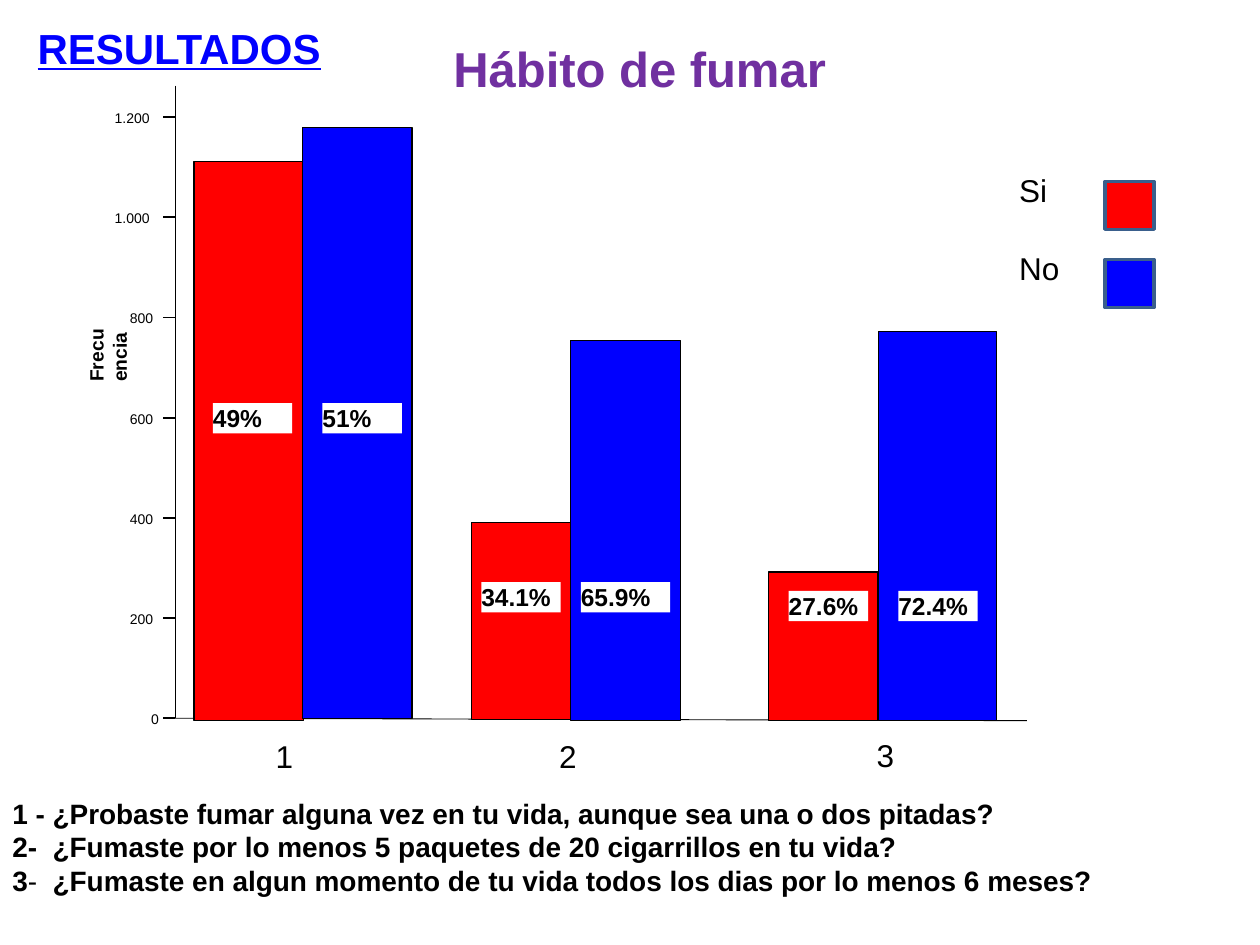
from dataclasses import dataclass

from lxml import etree
from pptx import Presentation
from pptx.dml.color import RGBColor
from pptx.enum.shapes import MSO_CONNECTOR, MSO_SHAPE
from pptx.enum.text import MSO_ANCHOR, PP_ALIGN
from pptx.oxml.ns import qn
from pptx.util import Inches, Pt

RECTANGLE = MSO_SHAPE.RECTANGLE
STRAIGHT = MSO_CONNECTOR.STRAIGHT
TOP = MSO_ANCHOR.TOP
LEFT = PP_ALIGN.LEFT


@dataclass(frozen=True)
class Theme:
    font: str = "Arial"
    black: str = "000000"
    white: str = "FFFFFF"
    yes: str = "FF0000"
    no: str = "0000FF"
    heading: str = "0000FF"
    title: str = "7030A0"
    key_line: str = "3A5F8C"
    title_size: float = 28
    heading_size: float = 24
    label_size: float = 18
    question_size: float = 16
    tag_size: float = 14
    axis_title_size: float = 11
    tick_size: float = 8


def rgb(value):
    return RGBColor.from_string(value)


class SlideBuilder:
    def __init__(self, page, theme):
        self.page = page
        self.theme = theme

    def fill_text(self, shape, paragraphs, size, color=None, margin=None, wrap=True,
                  space_after=0, **style):
        """Fill a shape with paragraphs, each a list of (text, format) spans."""
        frame = shape.text_frame
        frame.word_wrap = wrap
        frame.vertical_anchor = TOP
        if margin is not None:
            for side in ("left", "top", "right", "bottom"):
                setattr(frame, f"margin_{side}", Inches(margin))
        for index, spans in enumerate(paragraphs):
            para = frame.add_paragraph() if index else frame.paragraphs[0]
            para.alignment = LEFT
            para.space_after = Pt(space_after)
            for text, changes in spans:
                span = para.add_run()
                span.text = text
                span.font.color.rgb = rgb(color or self.theme.black)
                values = {"name": self.theme.font, "size": Pt(size), **style, **changes}
                for name, value in values.items():
                    setattr(span.font, name, value)

    def text(self, place, paragraphs, size, rotation=0, **options):
        if isinstance(paragraphs, str):
            paragraphs = [[(paragraphs, {})]]
        box = self.page.shapes.add_textbox(*map(Inches, place))
        box.rotation = rotation
        self.fill_text(box, paragraphs, size, **options)

    def rectangle(self, place, fill, line=None, width=0.75):
        box = self.page.shapes.add_shape(RECTANGLE, *map(Inches, place))
        box.shadow.inherit = False
        box.fill.solid()
        box.fill.fore_color.rgb = rgb(fill)
        if line:
            box.line.color.rgb = rgb(line)
            box.line.width = Pt(width)
        else:
            box.line.fill.background()
        return box

    def tag(self, place, text):
        box = self.rectangle(place, self.theme.white)
        self.fill_text(box, [[(text, {})]], self.theme.tag_size, margin=0,
                       space_after=10, bold=True)

    def line(self, start, end, width):
        line = self.page.shapes.add_connector(STRAIGHT, *map(Inches, (*start, *end)))
        line.line.color.rgb = rgb(self.theme.black)
        line.line.width = Pt(width)
        etree.SubElement(line._element.spPr, qn("a:effectLst"))


def add_axes(builder):
    theme = builder.theme
    axis_x, base, step = 1.39, 5.7, 0.795
    builder.line((axis_x, base), (8.15, 5.72), 0.5)
    builder.line((axis_x, 0.68), (axis_x, base), 0.5)
    tick_labels = ["0", "200", "400", "600", "800", "1.000", "1.200"]
    label_widths = {1: 0.08, 3: 0.25, 5: 0.37}
    for index, label in enumerate(tick_labels):
        y = base - index * step
        width = label_widths[len(label)]
        builder.line((axis_x, y), (axis_x - 0.1, y), 0.95)
        builder.text((1.28 - width, y - 0.06, width, 0.41), label,
                     theme.tick_size, margin=0)
    builder.text((0.95, 2.26, 0.49, 1.05), "Frecuencia", theme.axis_title_size,
                 rotation=270, margin=0, bold=True)


def add_bars(builder):
    theme = builder.theme
    bars = [
        ((1.54, 1.28, 0.87, 4.44), theme.yes),
        ((2.4, 1.01, 0.87, 4.69), theme.no),
        ((3.74, 4.15, 0.79, 1.56), theme.yes),
        ((4.53, 2.7, 0.87, 3.02), theme.no),
        ((6.97, 2.63, 0.94, 3.09), theme.no),
        ((6.1, 4.54, 0.87, 1.18), theme.yes),
    ]
    for place, fill in bars:
        builder.rectangle(place, fill, theme.black)
    tags = [
        ("49%", 1.69, 3.2, 0.63), ("51%", 2.56, 3.2, 0.63),
        ("34.1%", 3.82, 4.62, 0.63), ("65.9%", 4.61, 4.62, 0.71),
        ("27.6%", 6.26, 4.69, 0.63), ("72.4%", 7.13, 4.69, 0.63),
    ]
    for label, left, top, width in tags:
        builder.tag((left, top, width, 0.24), label)
    for label, left, top in (("1", 2.09, 5.8), ("2", 4.34, 5.8), ("3", 6.86, 5.79)):
        builder.text((left, top, 0.34, 0.4), label, theme.label_size)


def add_legend(builder):
    theme = builder.theme
    for index, (label, fill) in enumerate((("Si", theme.yes), ("No", theme.no))):
        top = 1.31 + index * 0.62
        builder.text((7.99, top, 0.75, 0.64), label, theme.label_size)
        builder.rectangle((8.77, top + 0.13, 0.39, 0.38), fill, theme.key_line, 2)


def add_questions(builder):
    questions = [
        [("1 - ¿Probaste fumar alguna vez en tu vida, aunque sea una o dos pitadas?", {})],
        [("2-  ¿Fumaste por lo menos 5 paquetes de 20 cigarrillos en tu vida?", {})],
        [("3", {}), ("-  ", {"bold": False}),
         ("¿Fumaste en algun momento de tu vida todos los dias por lo menos 6 meses?", {})],
    ]
    builder.text((0, 6.27, 8.94, 1.15), questions, builder.theme.question_size, bold=True)


def main():
    deck = Presentation()
    deck.slide_width, deck.slide_height = Inches(10), Inches(7.5)
    theme = Theme()
    builder = SlideBuilder(deck.slides.add_slide(deck.slide_layouts[6]), theme)
    builder.text((0.2, 0.13, 2.47, 0.51), "RESULTADOS", theme.heading_size,
                 color=theme.heading, wrap=False, bold=True, underline=True)
    builder.text((3.5, 0.26, 3.19, 0.57), "Hábito de fumar", theme.title_size,
                 color=theme.title, wrap=False, bold=True)
    add_legend(builder)
    add_axes(builder)
    add_bars(builder)
    add_questions(builder)
    deck.save("out.pptx")


if __name__ == "__main__":
    main()
